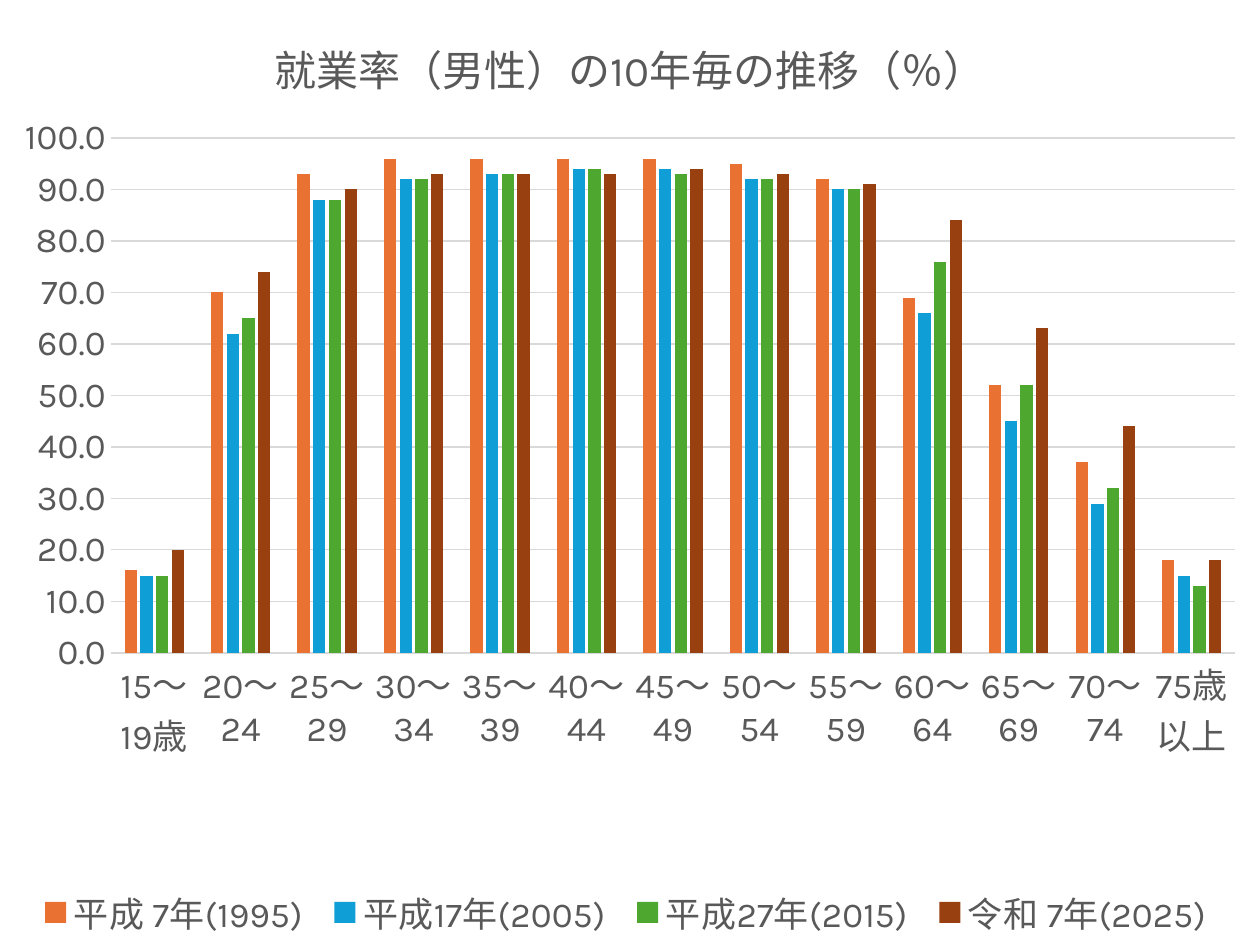
from lxml import etree
from pptx import Presentation
from pptx.chart.data import CategoryChartData as Data
from pptx.dml.color import RGBColor as RGB
from pptx.enum.chart import XL_CHART_TYPE as Kind
from pptx.enum.chart import XL_LEGEND_POSITION as Pos
from pptx.enum.chart import XL_TICK_MARK as Tick
from pptx.oxml.ns import qn
from pptx.util import Emu, Pt

W, H = 1260, 945
HUE = {"text": "595959", "grid": "D9D9D9", "y1995": "E97132",
       "y2005": "0F9ED5", "y2015": "4EA72E", "y2025": "994010"}
FACE = "Karla"


def px(n):
    return Emu(round(n * 914400 / 126))


def write(text, frame=None, font=None, size=20, hue="text"):
    """Put text in a frame, or just style a font when there is no text."""
    if text:
        part = frame.paragraphs[0].add_run()
        part.text = text
        font = part.font
    font.name, font.size, font.bold = FACE, Pt(size), False
    font.color.rgb = RGB.from_string(HUE[hue])


# Slide
deck = Presentation()
deck.slide_width, deck.slide_height = px(W), px(H)
slide = deck.slides.add_slide(deck.slide_layouts[6])

# Employment rates by age group
mids = [f"{age}～{age + 4}" for age in range(20, 75, 5)]
rates = {
    "平成 7年(1995) ": ("y1995", [16, 70, 93, 96, 96, 96, 96, 95, 92, 69, 52, 37, 18]),
    "平成17年(2005) ": ("y2005", [15, 62, 88, 92, 93, 94, 94, 92, 90, 66, 45, 29, 15]),
    "平成27年(2015) ": ("y2015", [15, 65, 88, 92, 93, 94, 93, 92, 90, 76, 52, 32, 13]),
    "令和 7年(2025) ": ("y2025", [20, 74, 90, 93, 93, 93, 94, 93, 91, 84, 63, 44, 18]),
}
data = Data(number_format="0.0")
data.categories = ["15～19歳", *mids, "75歳以上"]
for name, (hue, vals) in rates.items():
    data.add_series(name, vals)
chart = slide.shapes.add_chart(
    Kind.COLUMN_CLUSTERED, 0, 0, px(W), px(H), data).chart
write("", font=chart.font)

# Title
chart.has_title = True
write("就業率（男性）の10年毎の推移（％）", frame=chart.chart_title.text_frame, size=24)
chart.chart_title.include_in_layout = False

# Columns
plot = chart.plots[0]
plot.gap_width, plot.overlap = 219, -27
plot.vary_by_categories = False
for bar, (hue, vals) in zip(plot.series, rates.values()):
    bar.format.fill.solid()
    bar.format.fill.fore_color.rgb = RGB.from_string(HUE[hue])
    bar.invert_if_negative = False

# Axes and grid
cat, val = chart.category_axis, chart.value_axis
for axis in (cat, val):
    axis.major_tick_mark = axis.minor_tick_mark = Tick.NONE
    write("", font=axis.tick_labels.font)
val.minimum_scale, val.maximum_scale, val.major_unit = 0, 100, 10
val.tick_labels.number_format = "0.0"
val.tick_labels.number_format_is_linked = False
val.format.line.fill.background()
for line in (cat.format.line, val.major_gridlines.format.line):
    line.color.rgb = RGB.from_string(HUE["grid"])
    line.width = Pt(0.75)

# Legend
chart.has_legend = True
chart.legend.position = Pos.BOTTOM
chart.legend.include_in_layout = False
write("", font=chart.legend.font)

# Fixed inner plot area
area = chart.plots[0]._element.getparent()
lay = area.find(qn("c:layout"))
if lay is None:
    lay = etree.Element(qn("c:layout"))
    area.insert(0, lay)
box = etree.SubElement(lay, qn("c:manualLayout"))
for tag, v in (("layoutTarget", "inner"), ("xMode", "edge"), ("yMode", "edge"),
               ("x", 111 / W), ("y", 138 / H), ("w", 1124 / W), ("h", 515 / H)):
    etree.SubElement(box, qn("c:" + tag)).set("val", str(v))

deck.save("out.pptx")
